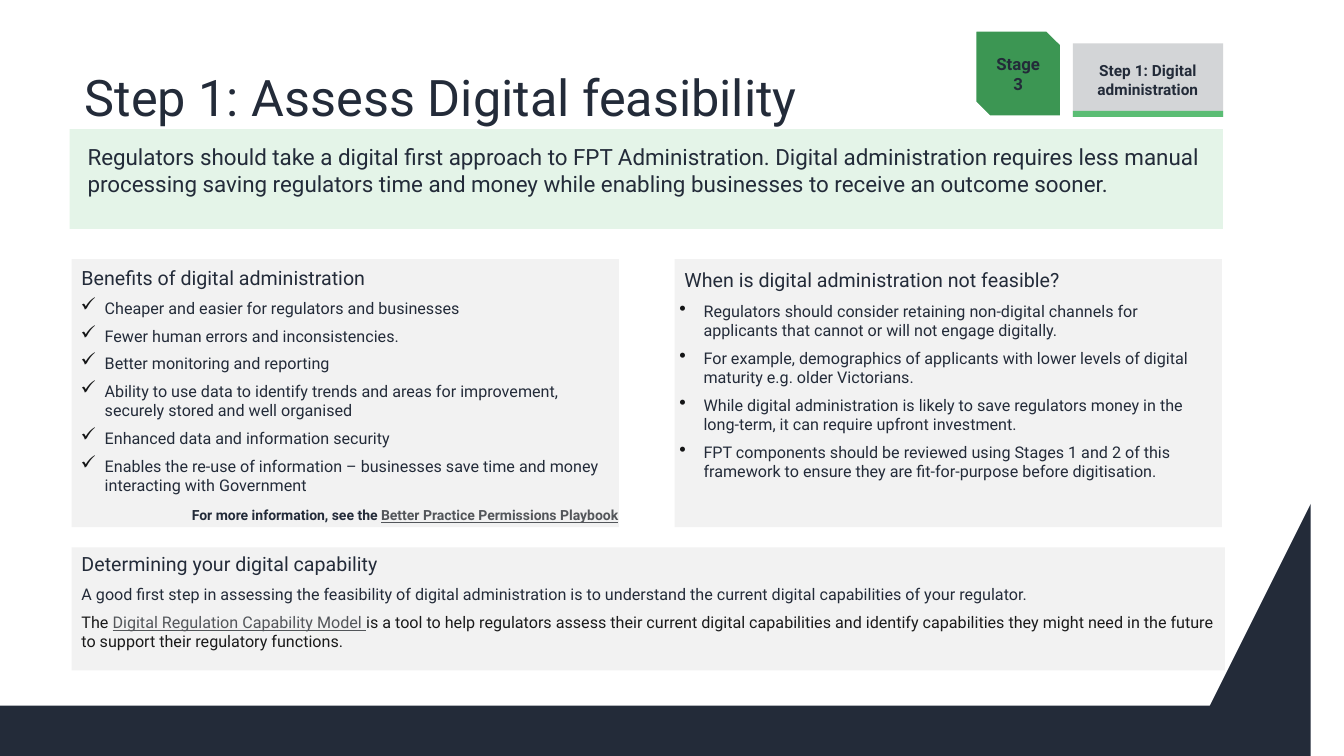
"""Build the slide on assessing digital feasibility."""
from dataclasses import dataclass

import lxml.etree
import pptx
import pptx.dml.color
import pptx.enum.shapes
import pptx.enum.text
import pptx.oxml.ns
import pptx.shapes.autoshape
import pptx.slide
import pptx.util

Inches = pptx.util.Inches
RGBColor = pptx.dml.color.RGBColor
Shapes = pptx.enum.shapes.MSO_SHAPE
Align = pptx.enum.text.PP_ALIGN
Anchor = pptx.enum.text.MSO_ANCHOR

NAVY = RGBColor(0x23, 0x2B, 0x39)
WHITE = RGBColor(0xFF, 0xFF, 0xFF)
STAGE_GREEN = RGBColor(0x3C, 0x96, 0x53)
STEP_GREEN = RGBColor(0x5B, 0xBD, 0x74)
PALE_GREEN = RGBColor(0xE4, 0xF4, 0xE8)
STEP_GREY = RGBColor(0xD3, 0xD5, 0xD7)
PANEL_GREY = RGBColor(0xF2, 0xF2, 0xF2)
LINK_GREY = RGBColor(0x53, 0x56, 0x5A)
BODY_BLACK = RGBColor(0x1A, 0x1A, 0x1A)
BULLET_BLACK = RGBColor(0x14, 0x15, 0x16)
FONT = "Roboto"
BULLET_INDENT = 0.24


@dataclass(frozen=True)
class Box:
    left: float
    top: float
    width: float
    height: float


@dataclass(frozen=True)
class Run:
    text: str
    color: RGBColor = NAVY
    underline: bool = False


@dataclass(frozen=True)
class Style:
    size: float
    bold: bool = False
    align: Align = Align.LEFT
    anchor: Anchor = Anchor.TOP
    space_after: float = 0
    line_spacing: float = 1.0
    side_inset: float = 0.1
    top_inset: float = 0.05
    bullet: str = ""


@dataclass(frozen=True)
class Block:
    box: Box
    paragraphs: list[list[Run]]
    style: Style


@dataclass(frozen=True)
class Panel:
    box: Box
    fill: RGBColor


def plain(*texts: str) -> list[list[Run]]:
    return [[Run(text)] for text in texts]


def add_bullet(paragraph_properties: lxml.etree.ElementBase, mark: str) -> None:
    qn = pptx.oxml.ns.qn
    indent = Inches(BULLET_INDENT)
    paragraph_properties.set("marL", str(indent))
    paragraph_properties.set("indent", str(-indent))
    color = lxml.etree.SubElement(paragraph_properties, qn("a:buClr"))
    lxml.etree.SubElement(color, qn("a:srgbClr"), val=str(BULLET_BLACK))
    lxml.etree.SubElement(paragraph_properties, qn("a:buSzPct"), val="120000")
    lxml.etree.SubElement(paragraph_properties, qn("a:buChar"), char=mark)


def write(shape: pptx.shapes.autoshape.Shape, paragraphs: list[list[Run]], style: Style) -> None:
    frame = shape.text_frame
    frame.word_wrap = True
    frame.vertical_anchor = style.anchor
    frame.margin_left = frame.margin_right = Inches(style.side_inset)
    frame.margin_top = Inches(style.top_inset)
    for index, runs in enumerate(paragraphs):
        paragraph = frame.add_paragraph() if index else frame.paragraphs[0]
        paragraph.alignment = style.align
        paragraph.line_spacing = style.line_spacing
        paragraph.space_after = pptx.util.Pt(style.space_after)
        if style.bullet:
            add_bullet(paragraph._p.get_or_add_pPr(), style.bullet)
        for part in runs:
            run = paragraph.add_run()
            run.text = part.text
            run.font.name = FONT
            run.font.size = pptx.util.Pt(style.size)
            run.font.bold = style.bold
            run.font.underline = part.underline
            run.font.color.rgb = part.color


def paint(shape: pptx.shapes.autoshape.Shape, fill: RGBColor) -> None:
    shape.shadow.inherit = False
    shape.fill.solid()
    shape.fill.fore_color.rgb = fill
    shape.line.fill.background()


def place(box: Box) -> tuple[int, int, int, int]:
    return Inches(box.left), Inches(box.top), Inches(box.width), Inches(box.height)


def add_panel(
    slide: pptx.slide.Slide, panel: Panel, outline: Shapes = Shapes.RECTANGLE
) -> pptx.shapes.autoshape.Shape:
    shape = slide.shapes.add_shape(outline, *place(panel.box))
    paint(shape, panel.fill)
    return shape


def add_block(slide: pptx.slide.Slide, block: Block) -> None:
    write(slide.shapes.add_textbox(*place(block.box)), block.paragraphs, block.style)


def add_footer(slide: pptx.slide.Slide) -> None:
    builder = slide.shapes.build_freeform(12.24, 7.14, scale=Inches(1))
    builder.add_line_segments([(0, 7.14), (0, 7.5), (13.33, 7.5), (13.33, 4.82)], close=True)
    paint(builder.convert_to_shape(), NAVY)


HEADING = Style(14)
TITLE = Style(36, anchor=Anchor.BOTTOM, line_spacing=0.9, side_inset=0.04)
STAGE = Style(12, bold=True, align=Align.CENTER, anchor=Anchor.MIDDLE)
STEP = Style(11, bold=True, align=Align.CENTER, anchor=Anchor.MIDDLE)
CAPABILITY = Style(11.5, space_after=6, top_inset=0.37)

PANELS = [
    Panel(Box(10.64, 1.1, 1.49, 0.06), STEP_GREEN),
    Panel(Box(0.69, 1.28, 11.44, 0.99), PALE_GREEN),
    Panel(Box(6.69, 2.57, 5.43, 2.66), PANEL_GREY),
    Panel(Box(0.71, 2.57, 5.43, 2.66), PANEL_GREY),
]
CAPABILITY_TEXT = plain(
    "A good first step in assessing the feasibility of digital administration is to "
    "understand the current digital capabilities of your regulator.",
) + [[
    Run("The ", BODY_BLACK),
    Run("Digital Regulation Capability Model ", LINK_GREY, underline=True),
    Run("is a tool to help regulators assess their current digital capabilities and identify "
        "capabilities they might need in the future to support their regulatory functions.",
        BODY_BLACK),
]]
BLOCKS = [
    Block(Box(0.8, 0.18, 11.5, 1.13), plain("Step 1: Assess Digital feasibility"), TITLE),
    Block(Box(0.77, 1.37, 11.27, 0.8), plain(
        "Regulators should take a digital first approach to FPT Administration. Digital "
        "administration requires less manual processing saving regulators time and money "
        "while enabling businesses to receive an outcome sooner."), Style(16, space_after=6)),
    Block(Box(0.71, 2.59, 5.45, 0.34), plain("Benefits of digital administration"), HEADING),
    Block(Box(0.7, 2.91, 5.45, 2.07), plain(
        "Cheaper and easier for regulators and businesses",
        "Fewer human errors and inconsistencies.",
        "Better monitoring and reporting",
        "Ability to use data to identify trends and areas for improvement, securely stored "
        "and well organised",
        "Enhanced data and information security",
        "Enables the re-use of information – businesses save time and money interacting "
        "with Government"), Style(11.5, space_after=6, bullet="✓")),
    Block(Box(6.69, 2.61, 5.37, 0.34),
          plain("When is digital administration not feasible?"), HEADING),
    Block(Box(6.64, 2.94, 5.26, 2.37), plain(
        "Regulators should consider retaining non-digital channels for applicants that "
        "cannot or will not engage digitally.",
        "For example, demographics of applicants with lower levels of digital maturity "
        "e.g. older Victorians.",
        "While digital administration is likely to save regulators money in the long-term, "
        "it can require upfront investment.",
        "FPT components should be reviewed using Stages 1 and 2 of this framework to ensure "
        "they are fit-for-purpose before digitisation."),
        Style(11.5, space_after=6, bullet="•")),
    Block(Box(0.71, 4.98, 5.52, 0.27), [[
        Run("For more information, see the "),
        Run("Better Practice Permissions Playbook", LINK_GREY, underline=True),
    ]], Style(10, bold=True, align=Align.RIGHT, space_after=6)),
    Block(Box(0.71, 5.43, 5.45, 0.34), plain("Determining your digital capability"), HEADING),
]


def main() -> None:
    deck = pptx.Presentation()
    deck.slide_width, deck.slide_height = Inches(13.33), Inches(7.5)
    slide = deck.slides.add_slide(deck.slide_layouts[6])
    add_footer(slide)
    stage = add_panel(slide, Panel(Box(9.67, 0.3, 0.86, 0.86), STAGE_GREEN),
                      Shapes.SNIP_2_DIAG_RECTANGLE)
    stage.line.color.rgb = WHITE
    stage.line.width = pptx.util.Pt(2)
    write(stage, plain("Stage", "3"), STAGE)
    step = add_panel(slide, Panel(Box(10.64, 0.43, 1.49, 0.73), STEP_GREY))
    write(step, plain("Step 1: Digital administration"), STEP)
    for panel in PANELS:
        add_panel(slide, panel)
    capability = add_panel(slide, Panel(Box(0.71, 5.43, 11.44, 1.22), PANEL_GREY))
    write(capability, CAPABILITY_TEXT, CAPABILITY)
    for block in BLOCKS:
        add_block(slide, block)
    deck.save("out.pptx")


if __name__ == "__main__":
    main()
